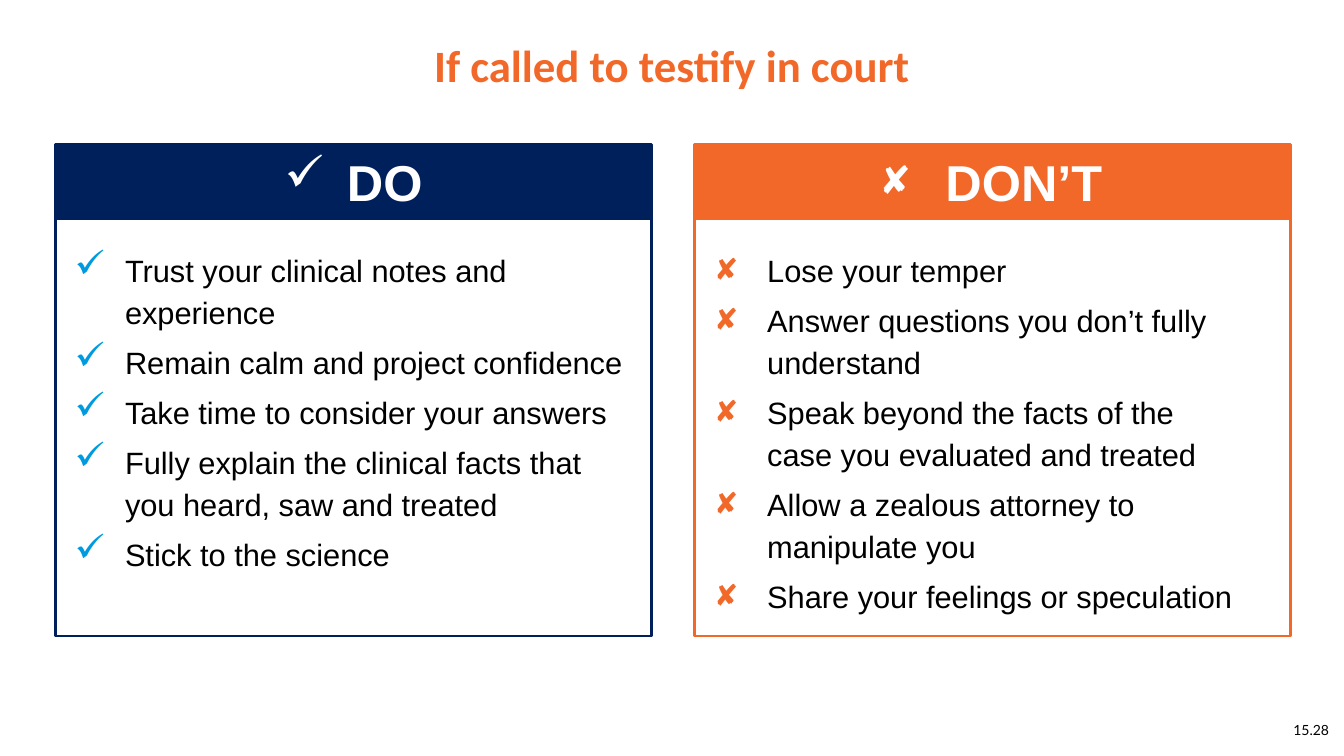
from lxml import etree
from pptx import Presentation
from pptx.dml.color import RGBColor
from pptx.enum.shapes import MSO_SHAPE
from pptx.enum.text import MSO_ANCHOR, PP_ALIGN
from pptx.oxml.ns import qn
from pptx.util import Emu, Pt

RECT = MSO_SHAPE.RECTANGLE
TOP, MIDDLE = MSO_ANCHOR.TOP, MSO_ANCHOR.MIDDLE
LEFT, CENTER, RIGHT = PP_ALIGN.LEFT, PP_ALIGN.CENTER, PP_ALIGN.RIGHT

PX = 9144  # 100 px to the inch
COLORS = {
    "navy": "00205C",
    "orange": "F26829",
    "blue": "009ADE",
    "black": "000000",
    "white": "FFFFFF",
}

DO = [
    "Trust your clinical notes and experience",
    "Remain calm and project confidence",
    "Take time to consider your answers",
    "Fully explain the clinical facts that\vyou heard, saw and treated",
    "Stick to the science",
]
DONT = [
    "Lose your temper",
    "Answer questions you don’t fully understand",
    "Speak beyond the facts of the\vcase you evaluated and treated",
    "Allow a zealous attorney to manipulate you",
    "Share your feelings or speculation",
]


def px(n):
    return Emu(n * PX)


def rgb(name):
    return RGBColor.from_string(COLORS[name])


class Deck:
    def __init__(self, width, height):
        self.prs = Presentation()
        self.prs.slide_width, self.prs.slide_height = px(width), px(height)
        self.slide = self.prs.slides.add_slide(self.prs.slide_layouts[5])

    def frame(self, sp, pad_x, pad_y, anchor=TOP):
        tf = sp.text_frame
        tf.word_wrap = True
        tf.margin_left = tf.margin_right = px(pad_x)
        tf.margin_top = tf.margin_bottom = px(pad_y)
        tf.vertical_anchor = anchor
        return tf

    def set_text(self, p, text, font, size, color, align, bold=False):
        p.text = text
        p.alignment = align
        for r in p.runs:
            r.font.name, r.font.size, r.font.bold = font, Pt(size), bold
            r.font.color.rgb = rgb(color)

    def bullet(self, p, char, color, indent, hang, percent=100):
        """Give the paragraph a hanging bullet; lengths are in px."""
        pPr = p._p.get_or_add_pPr()
        pPr.set("marL", str(px(indent)))
        pPr.set("indent", str(px(-hang)))
        clr = etree.SubElement(pPr, qn("a:buClr"))
        etree.SubElement(clr, qn("a:srgbClr"), val=COLORS[color])
        etree.SubElement(pPr, qn("a:buSzPct"), val=str(percent * 1000))
        etree.SubElement(pPr, qn("a:buChar"), char=char)

    def title(self, text, x, y, w, h):
        sp = self.slide.shapes.title
        sp.left, sp.top, sp.width, sp.height = px(x), px(y), px(w), px(h)
        tf = self.frame(sp, 13, 13, MIDDLE)
        self.set_text(tf.paragraphs[0], text, "Calibri", 32, "orange", CENTER, True)

    def rect(self, x, y, w, h, line, fill=None):
        sp = self.slide.shapes.add_shape(RECT, px(x), px(y), px(w), px(h))
        sp.shadow.inherit = False
        sp.line.color.rgb = rgb(line)
        sp.line.width = Pt(2)
        if fill:
            sp.fill.solid()
            sp.fill.fore_color.rgb = rgb(fill)
        else:
            sp.fill.background()
        return sp

    def text_box(self, x, y, w, h):
        return self.slide.shapes.add_textbox(px(x), px(y), px(w), px(h))

    def bullet_list(self, items, x, y, w, h, mark, color):
        tf = self.frame(self.text_box(x, y, w, h), 13, 13)
        for i, item in enumerate(items):
            p = tf.add_paragraph() if i else tf.paragraphs[0]
            self.bullet(p, mark, color, 67, 50, 125)
            p.line_spacing = 1.13
            p.space_after = Pt(6)
            self.set_text(p, item, "Arial", 22, "black", LEFT)

    def panel(self, x, heading, mark, color):
        self.rect(x, 216, 591, 415, color)
        header = self.rect(x, 143, 591, 74, color, color)
        p = self.frame(header, 13, 7).paragraphs[0]
        self.bullet(p, mark, "white", 62, 62)
        self.set_text(p, heading, "Arial", 36, "white", CENTER, True)

    def page_number(self, text, x, y, w, h):
        tf = self.frame(self.text_box(x, y, w, h), 10, 5)
        tf.margin_left = 0
        p = tf.paragraphs[0]
        p.line_spacing = 2.0
        self.set_text(p, text, "Lato", 10, "black", RIGHT)


def main():
    deck = Deck(1333, 750)
    deck.title("If called to testify in court", 0, 2, 1333, 125)
    deck.panel(55, "DO", "✓", "navy")
    deck.bullet_list(DO, 44, 232, 610, 344, "✓", "blue")
    deck.panel(689, "DON’T", "✘", "orange")
    deck.bullet_list(DONT, 681, 232, 610, 375, "✘", "orange")
    deck.page_number("15.28", 1271, 694, 57, 39)
    deck.prs.save("out.pptx")


if __name__ == "__main__":
    main()
